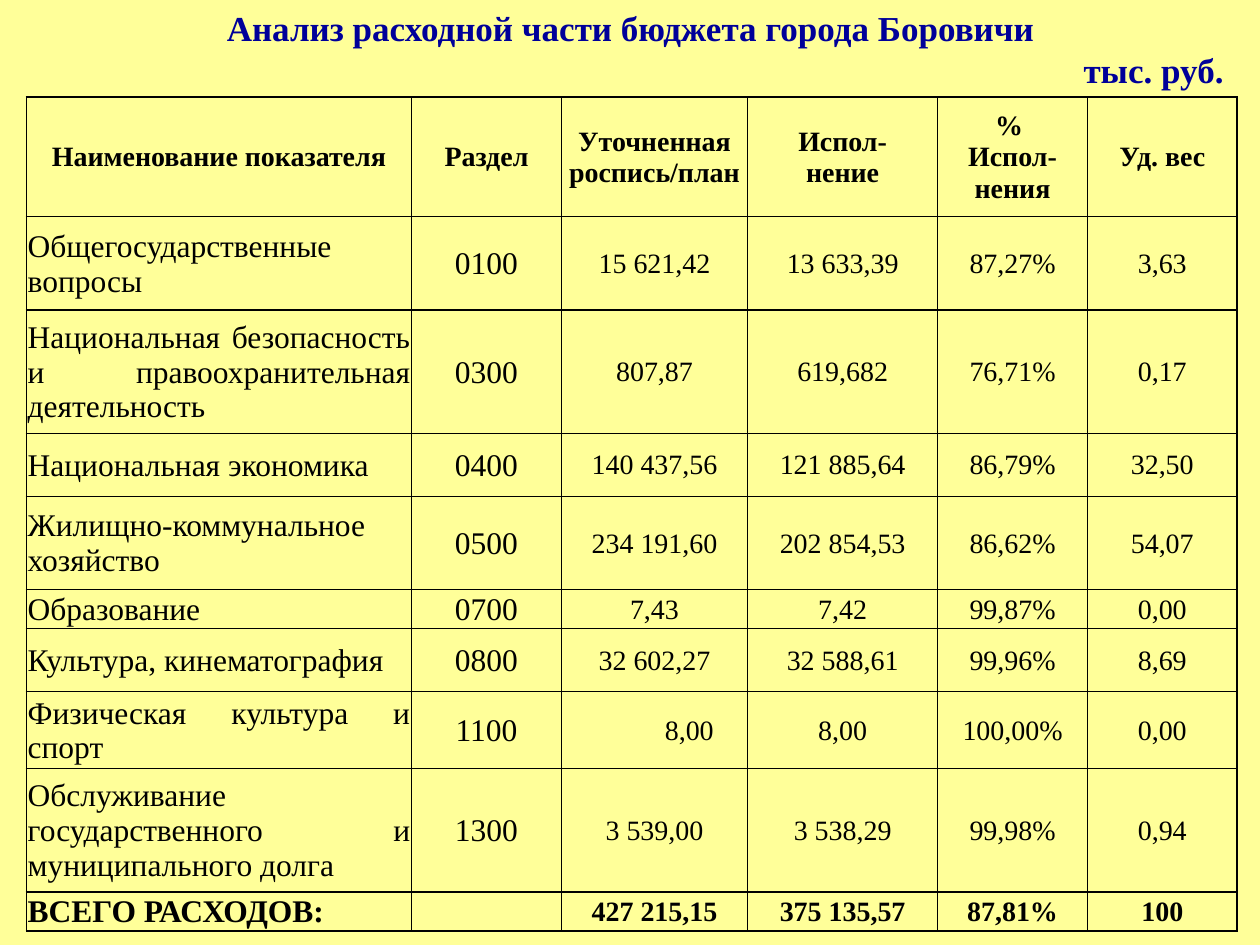
from lxml.etree import SubElement
from pptx import Presentation
from pptx.dml.color import RGBColor
from pptx.enum.text import MSO_ANCHOR, PP_ALIGN as Al
from pptx.oxml.ns import qn
from pptx.util import Inches, Pt

FONT = "Times New Roman"
COLS = [3.06, 1.19, 1.48, 1.51, 1.19, 1.19]
HEIGHTS = [0.95, 0.74, 0.98, 0.5, 0.74, 0.25, 0.5, 0.5, 0.98, 0.25]
ROWS = [
    ["Наименование показателя", "Раздел", "Уточненная роспись/план",
     "Испол-\nнение", "% \nИспол-нения", "Уд. вес"],
    ["Общегосударственные вопросы", "0100", "15 621,42", "13 633,39", "87,27%", "3,63"],
    ["Национальная безопасность и правоохранительная деятельность", "0300",
     "807,87", "619,682", "76,71%", "0,17"],
    ["Национальная экономика", "0400", "140 437,56", "121 885,64", "86,79%", "32,50"],
    ["Жилищно-коммунальное хозяйство", "0500", "234 191,60", "202 854,53", "86,62%", "54,07"],
    ["Образование", "0700", "7,43", "7,42", "99,87%", "0,00"],
    ["Культура, кинематография", "0800", "32 602,27", "32 588,61", "99,96%", "8,69"],
    ["Физическая культура и спорт", "1100", "8,00", "8,00", "100,00%", "0,00"],
    ["Обслуживание государственного и муниципального долга", "1300",
     "3 539,00", "3 538,29", "99,98%", "0,94"],
    ["ВСЕГО РАСХОДОВ:", "", "427 215,15", "375 135,57", "87,81%", "100"],
]


def rgb(color):
    """Turn a hex string into a colour."""
    return RGBColor.from_string(color)


def add_run(p, text, size, color="000000", bold=False, align=Al.CENTER):
    """Add one styled run to a paragraph."""
    p.alignment = align
    r = p.add_run()
    r.text = text
    r.font.name, r.font.size, r.font.bold = FONT, Pt(size), bold
    r.font.color.rgb = rgb(color)


def add_borders(cell):
    """Draw a thin black line on each side of a cell."""
    tc_pr = cell._tc.get_or_add_tcPr()
    for i, side in enumerate(("a:lnL", "a:lnR", "a:lnT", "a:lnB")):
        ln = tc_pr.makeelement(qn(side), {"w": str(Pt(1))})
        tc_pr.insert(i, ln)
        fill = SubElement(ln, qn("a:solidFill"))
        SubElement(fill, qn("a:srgbClr"), val="000000")


def add_heading(s, box):
    """Place the title and the unit of measure."""
    tf = s.shapes.add_textbox(*map(Inches, box)).text_frame
    tf.word_wrap = True
    add_run(tf.paragraphs[0], "Анализ расходной части бюджета города Боровичи",
            20, "000099", True)
    add_run(tf.add_paragraph(), "тыс. руб.", 20, "000099", True, Al.RIGHT)


def fill_cell(cell, text, row, col):
    """Style one cell by its row and column and write its text."""
    header, total = row == 0, row == len(ROWS) - 1
    cell.fill.background()
    add_borders(cell)
    cell.vertical_anchor = MSO_ANCHOR.MIDDLE
    cell.margin_left = cell.margin_right = cell.margin_top = Inches(0.01)
    cell.margin_bottom = 0
    align = Al.CENTER
    if col == 0 and not header:
        align = Al.LEFT if total else Al.JUSTIFY
    if (row, col) == (7, 2):
        align, cell.margin_right = Al.RIGHT, Inches(0.27)
    size = 18 if col < 2 and not header else 16
    tf = cell.text_frame
    for i, line in enumerate(text.split("\n") if text else []):
        p = tf.add_paragraph() if i else tf.paragraphs[0]
        add_run(p, line, size, bold=header or total, align=align)


def add_budget_table(s, box):
    """Place the table of expenses, scaling its columns to the box width."""
    table = s.shapes.add_table(len(ROWS), len(COLS), *map(Inches, box)).table
    table.first_row = table.horz_banding = False
    for column, width in zip(table.columns, COLS):
        column.width = Inches(box[2] * width / sum(COLS))
    for i, (row, height) in enumerate(zip(table.rows, HEIGHTS)):
        row.height = Inches(height)
        for j, cell in enumerate(row.cells):
            fill_cell(cell, ROWS[i][j], i, j)


def main():
    """Build and save the slide."""
    prs = Presentation()
    prs.slide_width, prs.slide_height = Inches(10), Inches(7.5)
    s = prs.slides.add_slide(prs.slide_layouts[6])
    s.background.fill.solid()
    s.background.fill.fore_color.rgb = rgb("FFFF99")
    add_heading(s, (0.2, 0, 9.61, 0.77))
    add_budget_table(s, (0.21, 0.77, 9.61, 6.6))
    prs.save("out.pptx")


if __name__ == "__main__":
    main()
